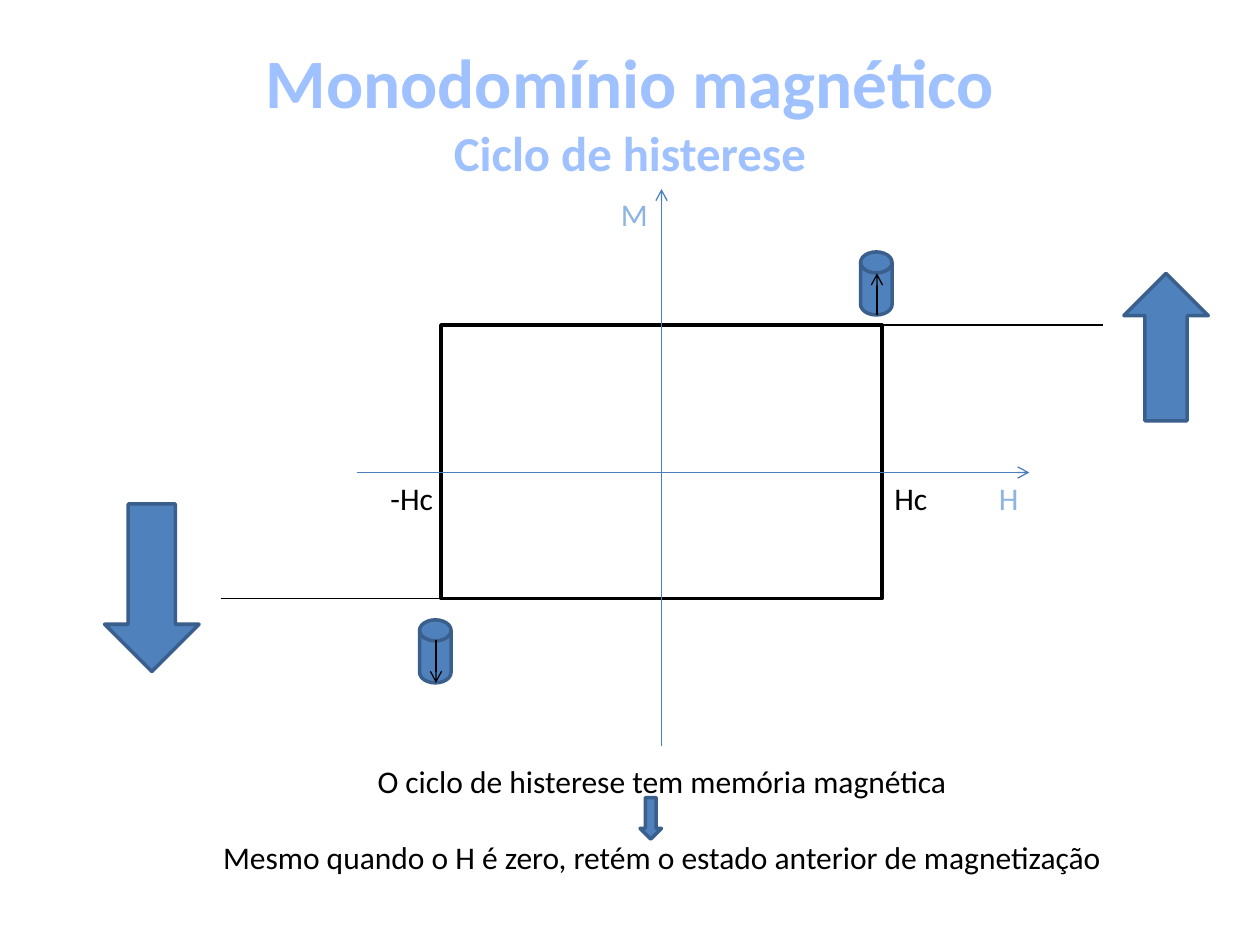
from dataclasses import dataclass

from lxml import etree
from pptx import Presentation
from pptx.dml.color import RGBColor
from pptx.enum.shapes import MSO_CONNECTOR, MSO_SHAPE
from pptx.enum.text import MSO_ANCHOR, PP_ALIGN
from pptx.oxml.ns import qn
from pptx.util import Inches, Pt

LEFT, CENTER = PP_ALIGN.LEFT, PP_ALIGN.CENTER
TOP, MIDDLE = MSO_ANCHOR.TOP, MSO_ANCHOR.MIDDLE
STRAIGHT = MSO_CONNECTOR.STRAIGHT
RECT, DISK = MSO_SHAPE.RECTANGLE, MSO_SHAPE.FLOWCHART_MAGNETIC_DISK
UP, DOWN = MSO_SHAPE.UP_ARROW, MSO_SHAPE.DOWN_ARROW


@dataclass(frozen=True)
class Theme:
    font: str = "Calibri"
    title: str = "A0C1FF"
    ink: str = "000000"
    paper: str = "FFFFFF"
    axis: str = "4B7EBC"
    axis_label: str = "8EB4E3"
    fill: str = "4F81BD"
    edge: str = "3A5F8C"
    title_size: float = 39.6
    subtitle_size: float = 27.9
    body_size: float = 18
    thin: float = 0.75
    thick: float = 2


T = Theme()

prs = Presentation()
prs.slide_width, prs.slide_height = Inches(10), Inches(7.5)
s = prs.slides.add_slide(prs.slide_layouts[6])


def add_text(lines, x, y, w, h, sizes=(T.body_size,), color=T.ink, bold=False,
             align=LEFT, anchor=TOP, inset=0.1, gap=0):
    tf = s.shapes.add_textbox(Inches(x), Inches(y), Inches(w), Inches(h)).text_frame
    tf.word_wrap = True
    tf.vertical_anchor = anchor
    tf.margin_left = tf.margin_right = Inches(inset)
    for i, line in enumerate(lines):
        p = tf.paragraphs[0] if i == 0 else tf.add_paragraph()
        p.alignment = align
        if i and gap:
            p.space_before = Pt(gap)
        r = p.add_run()
        r.text = line
        r.font.name, r.font.bold = T.font, bold
        r.font.size = Pt(sizes[i % len(sizes)])
        r.font.color.rgb = RGBColor.from_string(color)


def add_line(x1, y1, x2, y2, color=T.ink, arrow=False):
    c = s.shapes.add_connector(STRAIGHT, Inches(x1), Inches(y1), Inches(x2), Inches(y2))
    c.line.color.rgb = RGBColor.from_string(color)
    c.line.width = Pt(T.thin)
    if arrow:
        etree.SubElement(c.line._get_or_add_ln(), qn("a:tailEnd"), type="arrow")
    etree.SubElement(c._element.spPr, qn("a:effectLst"))


# Title
add_text(["Monodomínio magnético", "Ciclo de histerese"], 0.5, 0.25, 9, 1.25,
         sizes=(T.title_size, T.subtitle_size), color=T.title, bold=True,
         align=CENTER, anchor=MIDDLE)

# Loop, field arrows and magnetic cylinders
for kind, x, y, w, h, fill, edge in [
    (RECT, 3.5, 2.58, 3.5, 2.17, T.paper, T.ink),
    (DOWN, 5.08, 6.33, 0.17, 0.33, T.fill, T.edge),
    (UP, 8.92, 2.17, 0.67, 1.17, T.fill, T.edge),
    (DOWN, 0.83, 4, 0.75, 1.33, T.fill, T.edge),
    (DISK, 6.83, 2, 0.25, 0.5, T.fill, T.edge),
    (DISK, 3.33, 4.92, 0.25, 0.5, T.fill, T.edge),
]:
    sp = s.shapes.add_shape(kind, Inches(x), Inches(y), Inches(w), Inches(h))
    sp.shadow.inherit = False
    sp.fill.solid()
    sp.fill.fore_color.rgb = RGBColor.from_string(fill)
    sp.line.color.rgb = RGBColor.from_string(edge)
    sp.line.width = Pt(T.thick)

# Axes
add_line(5.25, 5.92, 5.25, 1.5, color=T.axis, arrow=True)
add_line(2.83, 3.75, 8.17, 3.75, color=T.axis, arrow=True)

# Saturation lines
add_line(7, 2.58, 8.75, 2.58)
add_line(1.75, 4.75, 3.5, 4.75)

# Magnetization inside the cylinders
add_line(6.96, 2.5, 6.96, 2.17, arrow=True)
add_line(3.46, 5.08, 3.46, 5.42, arrow=True)

# Axis and coercive field labels
for label, x, y, w, color in [
    ("-Hc", 3, 3.75, 0.58, T.ink),
    ("Hc", 7, 3.75, 0.58, T.ink),
    ("M", 4.83, 1.5, 0.33, T.axis_label),
    ("H", 7.83, 3.75, 0.25, T.axis_label),
]:
    add_text([label], x, y, w, 0.4, color=color)

# Conclusion
add_text(["O ciclo de histerese tem memória magnética",
          "Mesmo quando o H é zero, retém o estado anterior de magnetização"],
         1.67, 6, 7.17, 1.31, align=CENTER, inset=0, gap=22)

prs.save("out.pptx")
